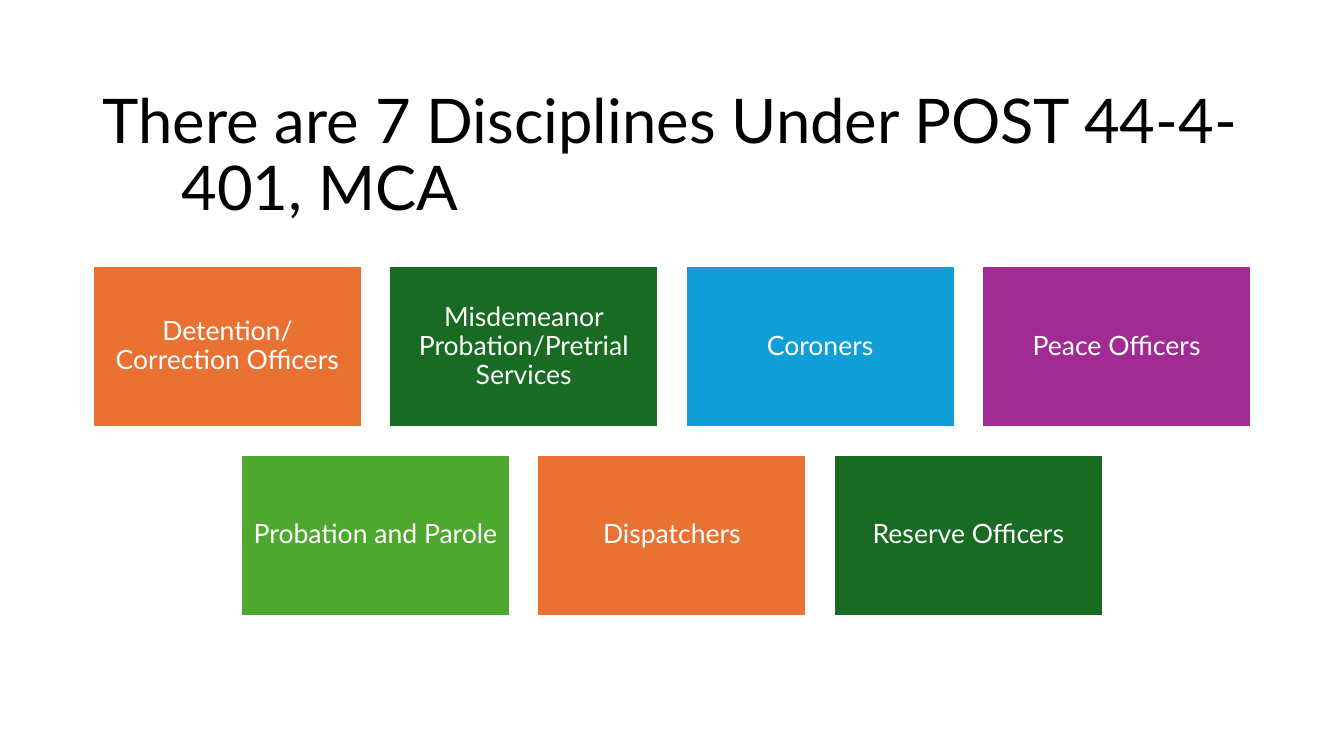
"""Build a slide that shows the seven disciplines as rows of coloured cards."""
import pptx
import pptx.dml.color
import pptx.enum.shapes
import pptx.enum.text
import pptx.util

SLIDE_WIDTH, SLIDE_HEIGHT = 13.33, 7.5
CARD_WIDTH, CARD_HEIGHT, GAP = 2.67, 1.6, 0.27
CARDS_TOP = 2.64
TITLE_HANG = 0.78
FONT = "Lato"
COLORS = {
    "black": "000000",
    "white": "FFFFFF",
    "orange": "E97132",
    "dark green": "196B24",
    "blue": "0F9ED5",
    "purple": "A02B93",
    "light green": "4EA72E",
}
TITLE = "There are 7 Disciplines Under POST 44-4-401, MCA"
ROWS = [
    [
        ("Detention/Correction Officers", "orange"),
        ("Misdemeanor Probation/Pretrial Services", "dark green"),
        ("Coroners", "blue"),
        ("Peace Officers", "purple"),
    ],
    [
        ("Probation and Parole", "light green"),
        ("Dispatchers", "orange"),
        ("Reserve Officers", "dark green"),
    ],
]


def color(name):
    """Return the named colour."""
    return pptx.dml.color.RGBColor.from_string(COLORS[name])


def write(shape, text, size, color_name, margin_x, margin_y):
    """Write one vertically centred paragraph into a shape and return it."""
    frame = shape.text_frame
    frame.word_wrap = True
    frame.vertical_anchor = pptx.enum.text.MSO_ANCHOR.MIDDLE
    frame.margin_left = frame.margin_right = pptx.util.Inches(margin_x)
    frame.margin_top = frame.margin_bottom = pptx.util.Inches(margin_y)
    paragraph = frame.paragraphs[0]
    paragraph.text = text
    paragraph.line_spacing = 0.9
    paragraph.font.name = FONT
    paragraph.font.size = pptx.util.Pt(size)
    paragraph.font.color.rgb = color(color_name)
    return paragraph


def add_title(slide):
    """Add the title, with its second line indented."""
    box = slide.shapes.add_textbox(
        *map(pptx.util.Inches, (0.92, 0.9, 11.5, 1.32)))
    paragraph = write(box, TITLE, 44, "black", 0.1, 0)
    paragraph.alignment = pptx.enum.text.PP_ALIGN.LEFT
    properties = paragraph._p.get_or_add_pPr()
    properties.set("marL", str(pptx.util.Inches(TITLE_HANG)))
    properties.set("indent", str(-pptx.util.Inches(TITLE_HANG)))


def add_card(slide, left, top, label, fill):
    """Add one discipline card."""
    card = slide.shapes.add_shape(
        pptx.enum.shapes.MSO_SHAPE.RECTANGLE,
        *map(pptx.util.Inches, (left, top, CARD_WIDTH, CARD_HEIGHT)))
    card.shadow.inherit = False
    card.fill.solid()
    card.fill.fore_color.rgb = color(fill)
    card.line.color.rgb = color("white")
    card.line.width = pptx.util.Pt(1.5)
    paragraph = write(card, label, 19, "white", 0.08, 0.08)
    paragraph.alignment = pptx.enum.text.PP_ALIGN.CENTER


def add_card_row(slide, top, cards):
    """Add a row of cards centred on the slide."""
    pitch = CARD_WIDTH + GAP
    start = (SLIDE_WIDTH - len(cards) * pitch + GAP) / 2
    for column, (label, fill) in enumerate(cards):
        add_card(slide, start + column * pitch, top, label, fill)


def main():
    """Build and save the presentation."""
    presentation = pptx.Presentation()
    presentation.slide_width = pptx.util.Inches(SLIDE_WIDTH)
    presentation.slide_height = pptx.util.Inches(SLIDE_HEIGHT)
    slide = presentation.slides.add_slide(presentation.slide_layouts[6])
    add_title(slide)
    for row, cards in enumerate(ROWS):
        add_card_row(slide, CARDS_TOP + row * (CARD_HEIGHT + GAP), cards)
    presentation.save("out.pptx")


if __name__ == "__main__":
    main()
